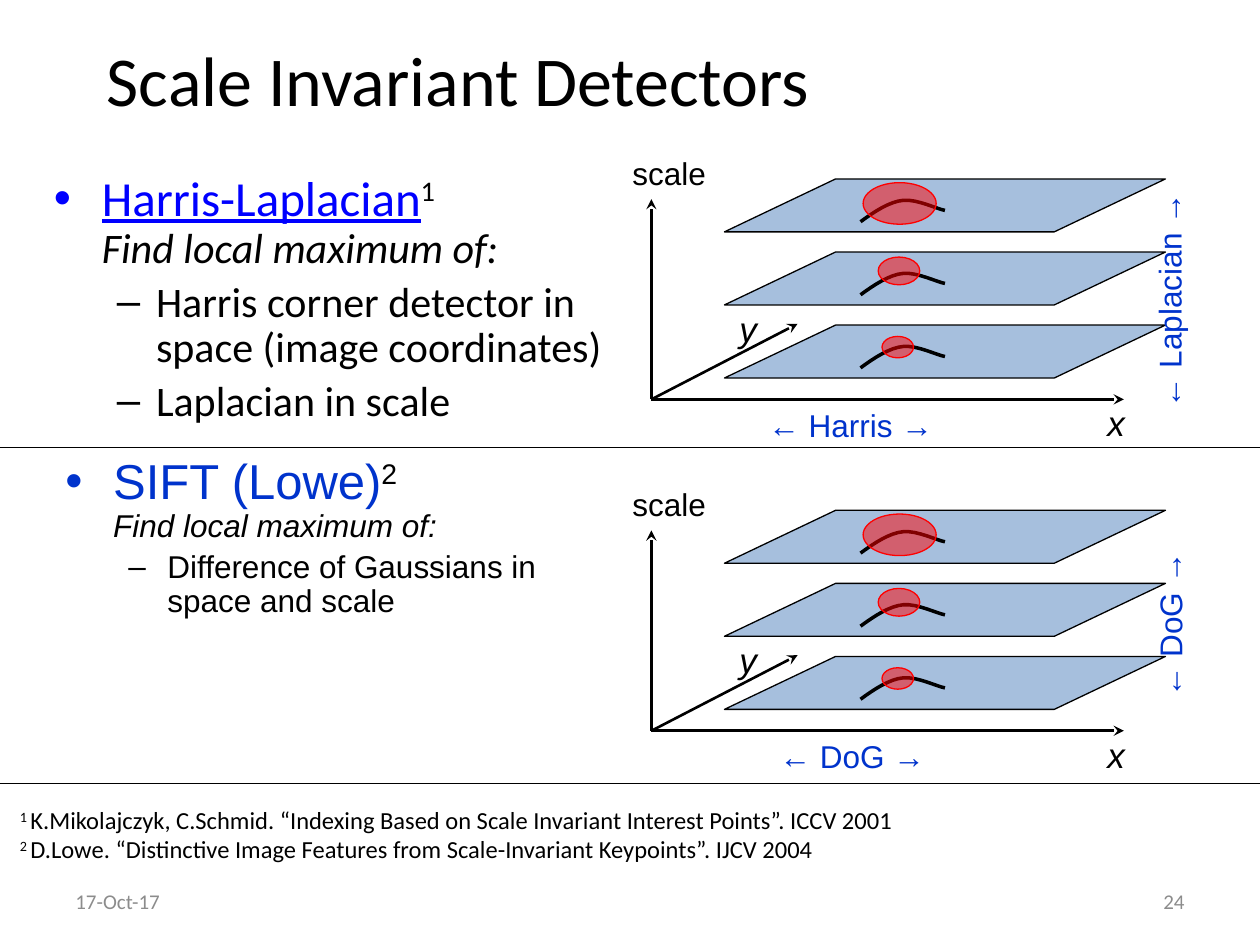
"""Build the slide on scale invariant detectors."""
from typing import NamedTuple

from lxml import etree
from pptx import Presentation
from pptx import util as u
from pptx.dml.color import RGBColor
from pptx.enum import shapes, text
from pptx.oxml import ns
from pptx.slide import Slide

BLACK = RGBColor(0x00, 0x00, 0x00)
LINK_BLUE = RGBColor(0x00, 0x00, 0xFF)
ACCENT_BLUE = RGBColor(0x00, 0x33, 0xCC)
PLANE_BLUE = RGBColor(0x4F, 0x81, 0xBD)
BLOB_RED = RGBColor(0xFF, 0x00, 0x00)
GREY = RGBColor(0x8C, 0x8C, 0x8C)

AXIS_LEFT = 5.17
PLANE_PITCH = 0.58
CURVE = (
    ((6.83, 0.34), (6.94, 0.26), (7.06, 0.18), (7.17, 0.17)),
    ((7.17, 0.17), (7.28, 0.16), (7.44, 0.24), (7.5, 0.25)),
)
CURVE_STEPS = 8


class Box(NamedTuple):
    left: float
    top: float
    width: float
    height: float

    def lengths(self) -> list[u.Length]:
        return [u.Inches(value) for value in self]


class Piece(NamedTuple):
    words: str
    size: float
    color: RGBColor = BLACK
    raised: bool = False
    italic: bool = False
    underline: bool = False


class Detector(NamedTuple):
    box: Box
    font: str
    heading: Piece
    mark: str
    body_size: float
    points: tuple[str, ...]
    gap: float


class Diagram(NamedTuple):
    origin: float
    space_words: str
    space_box: Box
    scale_words: str
    scale_box: Box


BLOBS = (Box(7, 0.09, 0.25, 0.17), Box(6.97, 0.04, 0.33, 0.22), Box(6.85, 0.03, 0.58, 0.33))

DETECTORS = (
    Detector(Box(0.33, 1.33, 4.58, 2.25), "Calibri",
             Piece("Harris-Laplacian", 28, LINK_BLUE, underline=True), "1", 24,
             ("Harris corner detector in space (image coordinates)", "Laplacian in scale"), 5),
    Detector(Box(0.42, 3.58, 4.58, 2.25), "Arial",
             Piece("SIFT (Lowe)", 28, ACCENT_BLUE), "2", 18,
             ("Difference of Gaussians in space and scale",), 4),
)

DIAGRAMS = (
    Diagram(3.17, "← Harris →", Box(6, 3.17, 1.86, 0.5),
            "← Laplacian →", Box(8.16, 1.92, 2.34, 0.5)),
    Diagram(5.8, "← DoG →", Box(6.09, 5.8, 1.67, 0.5),
            "← DoG →", Box(8.5, 4.55, 1.67, 0.5)),
)

REFERENCES = (
    ("1 ", "K.Mikolajczyk, C.Schmid. “Indexing Based on Scale Invariant Interest Points”. ICCV 2001"),
    ("2 ", "D.Lowe. “Distinctive Image Features from Scale-Invariant Keypoints”. IJCV 2004"),
)


def add_frame(slide: Slide, box: Box, wrap: bool = True, turn: float = 0):
    holder = slide.shapes.add_textbox(*box.lengths())
    holder.rotation = turn
    frame = holder.text_frame
    frame.word_wrap = wrap
    if not wrap:
        frame.auto_size = text.MSO_AUTO_SIZE.SHAPE_TO_FIT_TEXT
    return frame


def add_label(slide: Slide, box: Box, words: str, size: float, color: RGBColor = BLACK,
              font: str = "Arial", italic: bool = False, wrap: bool = False, turn: float = 0,
              align: text.PP_ALIGN = text.PP_ALIGN.LEFT) -> None:
    frame = add_frame(slide, box, wrap, turn)
    frame.vertical_anchor = text.MSO_ANCHOR.MIDDLE if wrap else text.MSO_ANCHOR.TOP
    line = frame.paragraphs[0]
    line.text = words
    line.alignment = align
    line.font.name, line.font.size = font, u.Pt(size)
    line.font.color.rgb, line.font.italic = color, italic


def add_pieces(paragraph, pieces: list[Piece]) -> None:
    for piece in pieces:
        run = paragraph.add_run()
        run.text = piece.words
        run.font.size = u.Pt(piece.size)
        run.font.color.rgb = piece.color
        run.font.italic, run.font.underline = piece.italic, piece.underline
        if piece.raised:
            run._r.get_or_add_rPr().set("baseline", "30000")


def set_bullet(paragraph, symbol: str, margin: float, hang: float) -> None:
    properties = paragraph._p.get_or_add_pPr()
    properties.set("marL", str(u.Inches(margin)))
    properties.set("indent", str(-u.Inches(hang)))
    etree.SubElement(properties, ns.qn("a:buFont")).set("typeface", "Arial")
    etree.SubElement(properties, ns.qn("a:buChar")).set("char", symbol)
    paragraph.line_spacing = 0.9


def draw_detector(slide: Slide, detector: Detector) -> None:
    frame = add_frame(slide, detector.box)
    heading = frame.paragraphs[0]
    set_bullet(heading, "•", 0.38, 0.38)
    heading.font.name = detector.font
    add_pieces(heading, [detector.heading, Piece(detector.mark, 28, raised=True)])
    heading.add_line_break()
    add_pieces(heading, [Piece("Find local maximum of:", detector.body_size, italic=True)])
    for words in detector.points:
        point = frame.add_paragraph()
        point.text, point.level = words, 1
        set_bullet(point, "–", 0.81, 0.31)
        point.space_before = u.Pt(detector.gap)
        point.font.name, point.font.size = detector.font, u.Pt(detector.body_size)
        point.font.color.rgb = BLACK


def draw_line(slide: Slide, start: tuple[float, float], end: tuple[float, float],
              width: float = 0.75, arrow: bool = False) -> None:
    line = slide.shapes.add_connector(shapes.MSO_CONNECTOR.STRAIGHT,
                                      *(u.Inches(value) for value in start + end))
    line.line.color.rgb, line.line.width = BLACK, u.Pt(width)
    properties = line._element.spPr
    if arrow:
        etree.SubElement(properties.find(ns.qn("a:ln")), ns.qn("a:tailEnd")).set("type", "stealth")
    etree.SubElement(properties, ns.qn("a:effectLst"))


def draw_tinted(slide: Slide, kind: shapes.MSO_SHAPE, box: Box, fill: RGBColor, edge: RGBColor):
    tinted = slide.shapes.add_shape(kind, *box.lengths())
    tinted.shadow.inherit = False
    tinted.fill.solid()
    tinted.fill.fore_color.rgb = fill
    color = tinted._element.spPr.find(ns.qn("a:solidFill"))[0]
    etree.SubElement(color, ns.qn("a:alpha")).set("val", "50000")
    tinted.line.color.rgb, tinted.line.width = edge, u.Pt(0.75)
    return tinted


def curve_points(top: float) -> list[tuple[u.Length, u.Length]]:
    points = [CURVE[0][0]]
    for knots in CURVE:
        for step in range(1, CURVE_STEPS + 1):
            t = step / CURVE_STEPS
            weights = ((1 - t) ** 3, 3 * t * (1 - t) ** 2, 3 * t * t * (1 - t), t ** 3)
            points.append(tuple(sum(w * k[axis] for w, k in zip(weights, knots)) for axis in (0, 1)))
    return [(u.Inches(x), u.Inches(top + y)) for x, y in points]


def draw_plane(slide: Slide, top: float, blob: Box) -> None:
    plane = draw_tinted(slide, shapes.MSO_SHAPE.PARALLELOGRAM, Box(5.75, top, 3.5, 0.42),
                        PLANE_BLUE, BLACK)
    plane.adjustments[0] = 2.1
    first, *rest = curve_points(top)
    builder = slide.shapes.build_freeform(*first)
    builder.add_line_segments(rest, close=False)
    curve = builder.convert_to_shape()
    curve.shadow.inherit = False
    curve.fill.background()
    curve.line.color.rgb, curve.line.width = BLACK, u.Pt(2)
    draw_tinted(slide, shapes.MSO_SHAPE.OVAL, blob._replace(top=top + blob.top), BLOB_RED, BLOB_RED)


def draw_diagram(slide: Slide, diagram: Diagram) -> None:
    base = diagram.origin
    for tip in ((AXIS_LEFT, base - 1.59), (8.92, base), (6.33, base - 0.6)):
        draw_line(slide, (AXIS_LEFT, base), tip, 1.5, arrow=True)
    add_label(slide, Box(4.92, base - 2, 0.87, 0.5), "scale", 18)
    add_label(slide, Box(8.69, base - 0.03, 0.32, 0.43), "x", 20, italic=True)
    add_label(slide, Box(5.77, base - 0.78, 0.32, 0.43), "y", 20, italic=True)
    for level, blob in enumerate(BLOBS):
        draw_plane(slide, base - 0.59 - level * PLANE_PITCH, blob)
    add_label(slide, diagram.space_box, diagram.space_words, 18, ACCENT_BLUE)
    add_label(slide, diagram.scale_box, diagram.scale_words, 18, ACCENT_BLUE, turn=270)


def draw_references(slide: Slide) -> None:
    frame = add_frame(slide, Box(0.06, 6.34, 7.28, 0.57), wrap=False)
    for index, (mark, words) in enumerate(REFERENCES):
        entry = frame.add_paragraph() if index else frame.paragraphs[0]
        entry.font.name = "Calibri"
        add_pieces(entry, [Piece(mark, 14, raised=True), Piece(words, 14)])


def main() -> None:
    deck = Presentation()
    deck.slide_width, deck.slide_height = u.Inches(10), u.Inches(7.5)
    slide = deck.slides.add_slide(deck.slide_layouts[6])
    add_label(slide, Box(0.75, 0, 8.5, 1.25), "Scale Invariant Detectors", 40, font="Calibri", wrap=True)
    for detector, diagram in zip(DETECTORS, DIAGRAMS):
        draw_detector(slide, detector)
        draw_diagram(slide, diagram)
    for height in (3.55, 6.22):
        draw_line(slide, (0, height), (10, height))
    draw_references(slide)
    add_label(slide, Box(0.5, 6.95, 2.33, 0.4), "17-Oct-17", 12, GREY, "Calibri", wrap=True)
    add_label(slide, Box(7.17, 6.95, 2.33, 0.4), "24", 12, GREY, "Calibri", wrap=True,
              align=text.PP_ALIGN.RIGHT)
    deck.save("out.pptx")


if __name__ == "__main__":
    main()
